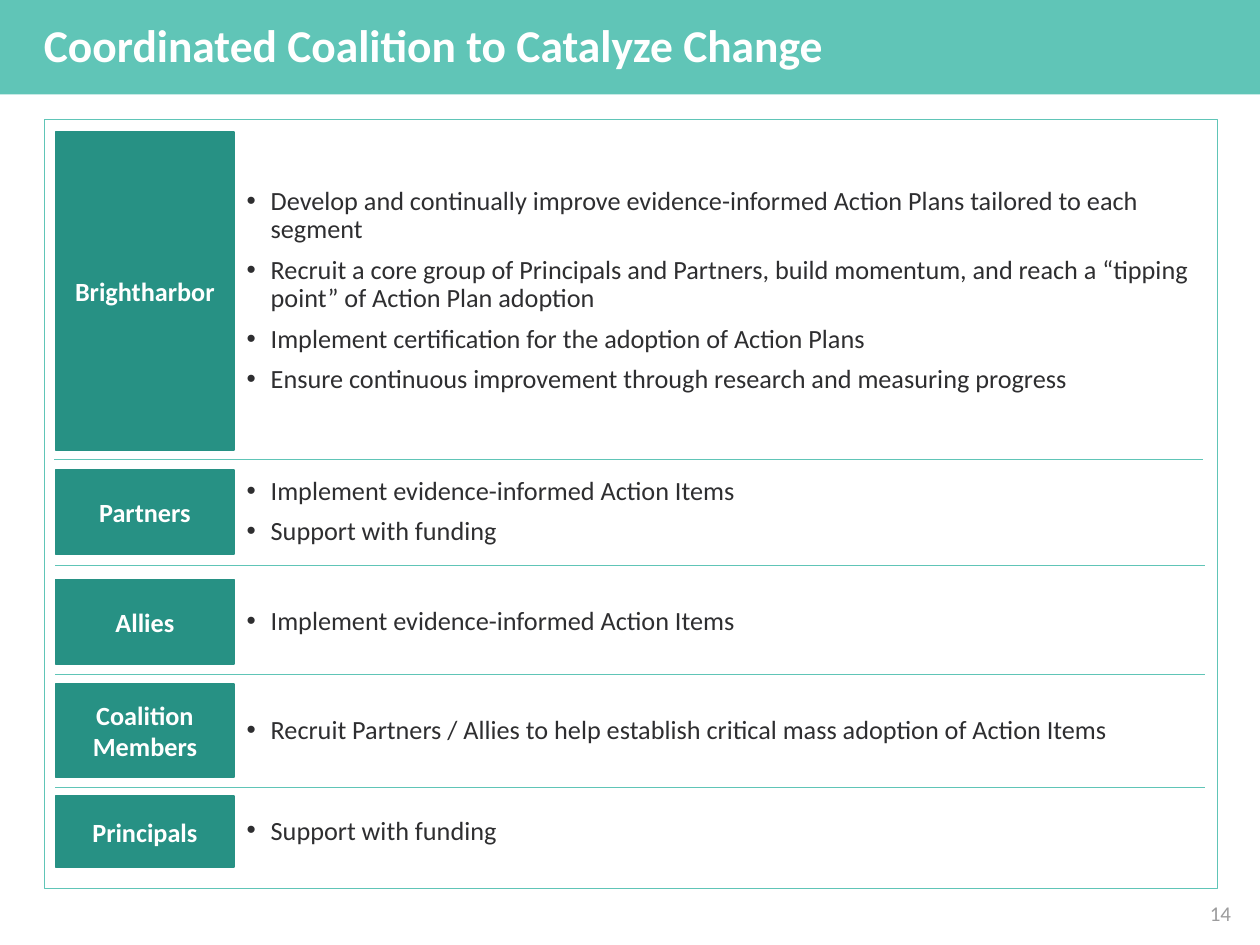
from dataclasses import dataclass

from lxml.etree import SubElement
from pptx import Presentation
from pptx.dml.color import RGBColor
from pptx.enum.shapes import MSO_CONNECTOR, MSO_SHAPE
from pptx.enum.text import MSO_ANCHOR, PP_ALIGN
from pptx.oxml.ns import qn
from pptx.util import Inches, Pt


@dataclass(frozen=True)
class Theme:
    font: str = "Calibri"
    banner: RGBColor = RGBColor(0x60, 0xC5, 0xB7)
    label: RGBColor = RGBColor(0x27, 0x91, 0x84)
    white: RGBColor = RGBColor(0xFF, 0xFF, 0xFF)
    body: RGBColor = RGBColor(0x2E, 0x2E, 0x30)
    muted: RGBColor = RGBColor(0x9C, 0x9C, 0x9D)
    title_size: int = 26
    body_size: int = 15
    number_size: int = 12
    rule_width: float = 0.5


THEME = Theme()


def write(shape, lines, size=THEME.body_size, color=THEME.body, bold=False,
          align=PP_ALIGN.LEFT, spacing=None, indent=0, bullet=False):
    """Fill a shape with one paragraph per line; indent is in inches."""
    frame = shape.text_frame
    frame.word_wrap = True
    frame.vertical_anchor = MSO_ANCHOR.MIDDLE
    for index, line in enumerate(lines):
        paragraph = frame.add_paragraph() if index else frame.paragraphs[0]
        paragraph.alignment = align
        paragraph.line_spacing = spacing
        run = paragraph.add_run()
        run.text = line
        run.font.name = THEME.font
        run.font.size = Pt(size)
        run.font.bold = bold
        run.font.color.rgb = color
        properties = paragraph._p.get_or_add_pPr()
        properties.set("marL", str(Inches(indent)))
        if bullet:
            paragraph.space_before = Pt(7)
            properties.set("indent", str(-Inches(indent)))
            SubElement(properties, qn("a:buFont")).set("typeface", "Arial")
            SubElement(properties, qn("a:buChar")).set("char", "•")


def add_box(left, top, width, height, fill=None, line=None, line_width=1):
    """Add a rectangle, in inches, without shadow."""
    box = slide.shapes.add_shape(MSO_SHAPE.RECTANGLE, Inches(left), Inches(top),
                                 Inches(width), Inches(height))
    box.shadow.inherit = False
    if fill is None:
        box.fill.background()
    else:
        box.fill.solid()
        box.fill.fore_color.rgb = fill
    if line is None:
        box.line.fill.background()
    else:
        box.line.color.rgb = line
        box.line.width = Pt(line_width)
    return box


presentation = Presentation()
presentation.slide_width = Inches(10)
presentation.slide_height = Inches(7.5)
slide = presentation.slides.add_slide(presentation.slide_layouts[6])

# Title banner and frame
banner = add_box(0, 0, 10, 0.75, fill=THEME.banner)
write(banner, ["Coordinated Coalition to Catalyze Change"], size=THEME.title_size,
      color=THEME.white, bold=True, spacing=0.9, indent=0.25)
add_box(0.35, 0.95, 9.31, 6.1, line=THEME.banner, line_width=THEME.rule_width)

# Roles: name, top, height, actions
LABEL_LEFT, LABEL_WIDTH = 0.44, 1.42
ACTIONS_LEFT, ACTIONS_WIDTH = LABEL_LEFT + LABEL_WIDTH, 7.69
roles = [
    ("Brightharbor", 1.05, 2.52, [
        "Develop and continually improve evidence-informed Action Plans tailored to each segment",
        "Recruit a core group of Principals and Partners, build momentum, "
        "and reach a “tipping point” of Action Plan adoption",
        "Implement certification for the adoption of Action Plans",
        "Ensure continuous improvement through research and measuring progress",
    ]),
    ("Partners", 3.73, 0.67, ["Implement evidence-informed Action Items",
                              "Support with funding"]),
    ("Allies", 4.6, 0.67, ["Implement evidence-informed Action Items"]),
    ("Coalition Members", 5.43, 0.74, [
        "Recruit Partners / Allies to help establish critical mass adoption of Action Items"]),
    ("Principals", 6.32, 0.56, ["Support with funding"]),
]
for name, top, height, actions in roles:
    label = add_box(LABEL_LEFT, top, LABEL_WIDTH, height,
                    fill=THEME.label, line=THEME.label)
    write(label, [name], color=THEME.white, bold=True, align=PP_ALIGN.CENTER)
    action_list = slide.shapes.add_textbox(Inches(ACTIONS_LEFT), Inches(top),
                                           Inches(ACTIONS_WIDTH), Inches(height))
    write(action_list, actions, spacing=0.9, indent=0.19, bullet=True)

# Dividers between the roles
for left, height in [(0.43, 3.65), (0.44, 4.49), (0.44, 5.35), (0.44, 6.25)]:
    divider = slide.shapes.add_connector(MSO_CONNECTOR.STRAIGHT, Inches(left), Inches(height),
                                         Inches(left + 9.12), Inches(height))
    divider.line.color.rgb = THEME.banner
    divider.line.width = Pt(THEME.rule_width)
    SubElement(divider._element.spPr, qn("a:effectLst"))

# Page number
page_number = slide.shapes.add_textbox(Inches(7.59), Inches(7.1), Inches(2.25), Inches(0.3))
page_number.text_frame.margin_left = page_number.text_frame.margin_right = Inches(0.07)
page_number.text_frame.margin_top = page_number.text_frame.margin_bottom = Inches(0.04)
write(page_number, ["14"], size=THEME.number_size, color=THEME.muted, align=PP_ALIGN.RIGHT)

presentation.save("out.pptx")
